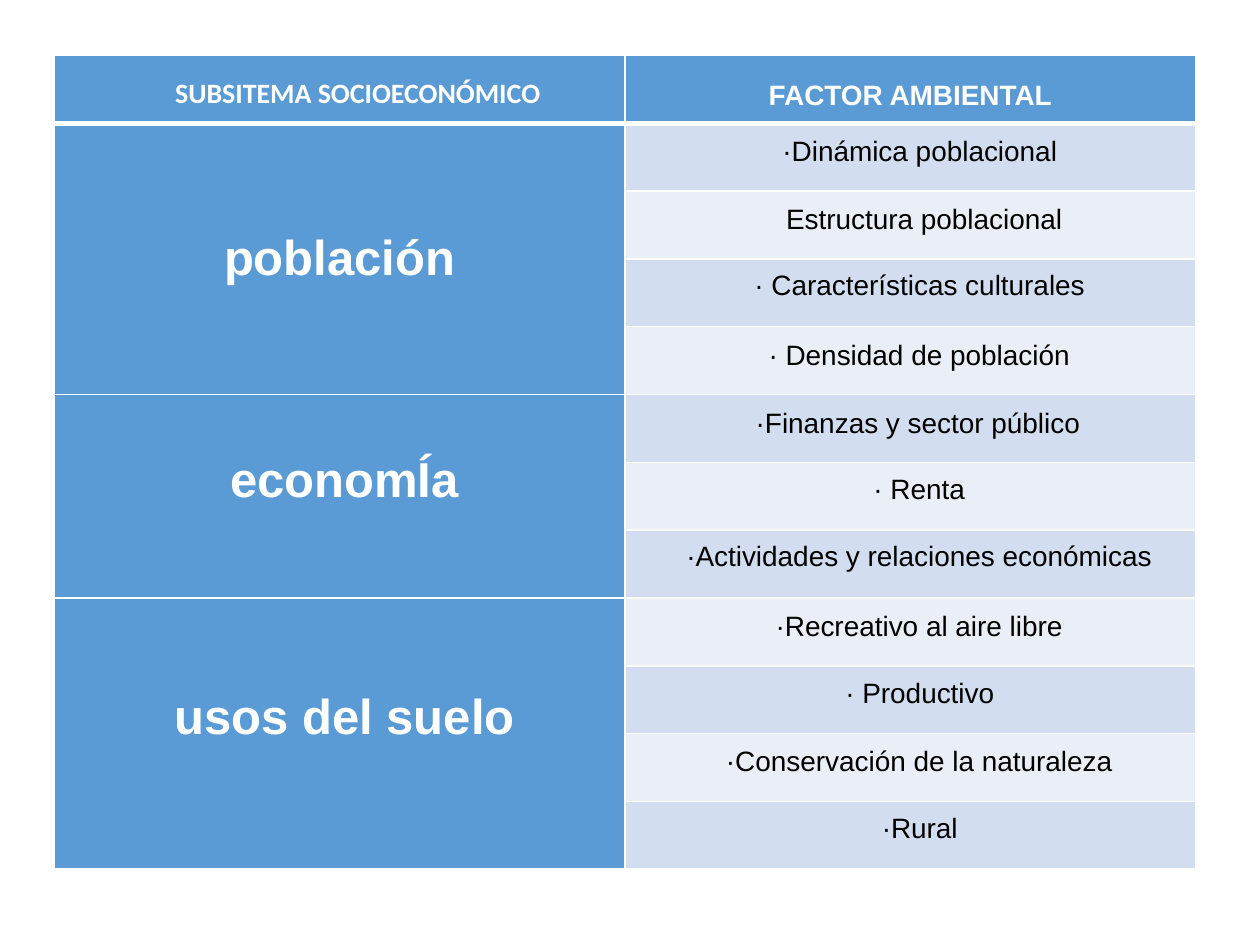
"""Build a slide with a table of socioeconomic subsystems and environmental factors."""
from lxml.etree import SubElement
from pptx import Presentation
from pptx.dml.color import RGBColor
from pptx.enum.text import MSO_ANCHOR, PP_ALIGN
from pptx.oxml.ns import qn
from pptx.util import Inches, Pt

BLUE = RGBColor(0x5B, 0x9B, 0xD5)
BANDS = (RGBColor(0xD2, 0xDE, 0xEF), RGBColor(0xEA, 0xEF, 0xF7))
WHITE = RGBColor(0xFF, 0xFF, 0xFF)
BLACK = RGBColor(0, 0, 0)

SUBSYSTEMS = [
    ("población", {}, [
        ("·Dinámica poblacional", 0.15, 11.6),
        ("Estructura poblacional", 0.22, 11.6),
        ("· Características culturales", 0.15, 9.8),
        ("· Densidad de población", 0.14, 12.8),
    ]),
    ("economÍa", {"margin": 0.08, "line": 12.8, "before": 24.4, "after": 8}, [
        ("·Finanzas y sector público", 0.12, 12.8),
        ("· Renta", 0.14, 10.8),
        ("·Actividades y relaciones económicas", 0.14, 9.8),
    ]),
    ("usos del suelo", {"margin": 0.08, "line": 12.8, "before": 32.2, "after": 8}, [
        ("·Recreativo al aire libre", 0.14, 11.6),
        ("· Productivo", 0.15, 10.8),
        ("·Conservación de la naturaleza", 0.14, 11.2),
        ("·Rural", 0.15, 10.8),
    ]),
]


def write_text(cell, text, size=16, font="Arial", color=WHITE, bold=True,
               margin=0, indent=0, line=None, before=0, after=0):
    """Write one centred paragraph in a cell."""
    paragraph = cell.text_frame.paragraphs[0]
    paragraph.alignment = PP_ALIGN.CENTER
    paragraph.space_before = Pt(before)
    paragraph.space_after = Pt(after)
    if line:
        paragraph.line_spacing = Pt(line)
    properties = paragraph._p.get_or_add_pPr()
    properties.set("marL", str(Inches(margin)))
    properties.set("indent", str(Inches(indent)))
    run = paragraph.add_run()
    run.text = text
    run.font.size = Pt(size)
    run.font.name = font
    run.font.bold = bold
    run.font.color.rgb = color


def style_cell(cell, color, top=1, bottom=1):
    """Set the margins, white borders and fill of a cell."""
    cell.vertical_anchor = MSO_ANCHOR.MIDDLE
    cell.margin_left = cell.margin_right = Inches(0.01)
    cell.margin_top = cell.margin_bottom = 0
    properties = cell._tc.get_or_add_tcPr()
    for side, width in (("L", 1), ("R", 1), ("T", top), ("B", bottom)):
        border = SubElement(properties, qn(f"a:ln{side}"), w=str(Pt(width)))
        fill = SubElement(border, qn("a:solidFill"))
        SubElement(fill, qn("a:srgbClr"), val=str(WHITE))
    cell.fill.solid()
    cell.fill.fore_color.rgb = color


def add_factor_table(slide):
    """Add the table frame with its header and its styled cells."""
    row_count = 1 + sum(len(factors) for _, _, factors in SUBSYSTEMS)
    table = slide.shapes.add_table(row_count, 2, Inches(0.43), Inches(0.44),
                                   Inches(9.06), Inches(6.46)).table
    table.first_row = table.horz_banding = False
    for row in range(row_count):
        top = 3 if row == 1 else 1
        bottom = 3 if row == 0 else 1
        factor_color = BANDS[(row - 1) % 2] if row else BLUE
        style_cell(table.cell(row, 0), BLUE, top, bottom)
        style_cell(table.cell(row, 1), factor_color, top, bottom)
    write_text(table.cell(0, 0), "SUBSITEMA SOCIOECONÓMICO", font="Calibri",
               margin=0.07, indent=0.22, line=25)
    write_text(table.cell(0, 1), "FACTOR AMBIENTAL", line=25)
    return table


def fill_subsystems(table):
    """Merge the cells of each subsystem and list its factors."""
    row = 1
    for name, spacing, factors in SUBSYSTEMS:
        table.cell(row, 0).merge(table.cell(row + len(factors) - 1, 0))
        write_text(table.cell(row, 0), name, size=28, **spacing)
        for text, margin, line in factors:
            write_text(table.cell(row, 1), text, color=BLACK, bold=False,
                       margin=margin, line=line, after=8)
            row += 1


def main():
    """Create and save the presentation."""
    presentation = Presentation()
    presentation.slide_width = Inches(10)
    presentation.slide_height = Inches(7.5)
    slide = presentation.slides.add_slide(presentation.slide_layouts[6])
    fill_subsystems(add_factor_table(slide))
    presentation.save("out.pptx")


if __name__ == "__main__":
    main()
